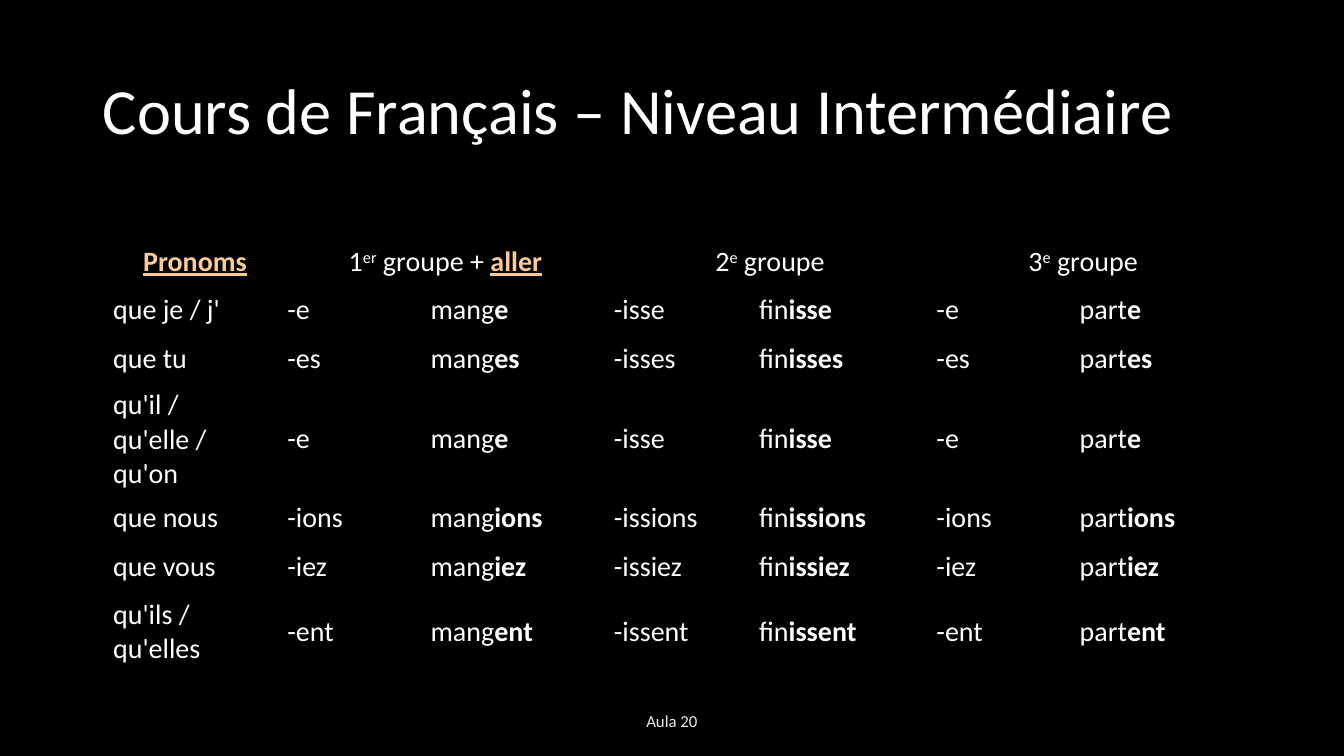
from dataclasses import dataclass

from lxml import etree
from pptx import Presentation
from pptx.dml.color import RGBColor
from pptx.enum.text import MSO_ANCHOR, MSO_AUTO_SIZE, PP_ALIGN
from pptx.oxml.ns import qn
from pptx.util import Cm, Pt

LEFT, CENTER = PP_ALIGN.LEFT, PP_ALIGN.CENTER
MIDDLE = MSO_ANCHOR.MIDDLE
NO_FIT = MSO_AUTO_SIZE.NONE


@dataclass(frozen=True)
class Theme:
    font: str = "Calibri"
    back: str = "000000"
    ink: str = "FFFFFF"
    accent: str = "FBCA98"
    fade: tuple = ((0, "9E9E9E"), (28, "EDEDED"), (100, "FFFFFF"))
    title: int = 46
    body: int = 20
    small: int = 12
    rule: float = 0.75


def add_fill(parent, color):
    fill = etree.SubElement(parent, qn("a:solidFill"))
    etree.SubElement(fill, qn("a:srgbClr"), val=color)


def add_fade(run, stops):
    """Fill the letters with a vertical gradient."""
    run.font.fill.gradient()
    grad = run.font._element.find(qn("a:gradFill"))
    for part in list(grad):
        grad.remove(part)
    group = etree.SubElement(grad, qn("a:gsLst"))
    for place, color in stops:
        stop = etree.SubElement(group, qn("a:gs"), pos=str(place * 1000))
        etree.SubElement(stop, qn("a:srgbClr"), val=color)
    etree.SubElement(grad, qn("a:lin"), ang="5400000", scaled="0")


def write(frame, runs, theme, size, align=LEFT, line=None, after=None, fade=None):
    """Write (text, style) runs; styles: bold, raised, key."""
    frame.word_wrap = True
    para = frame.paragraphs[0]
    para.alignment, para.line_spacing = align, line
    para.space_before = Pt(0)
    if after is not None:
        para.space_after = Pt(after)
    for text, style in runs:
        run = para.add_run()
        run.text = text
        font = run.font
        font.name, font.size = theme.font, Pt(size)
        font.bold = style in ("bold", "key")
        font.underline = style == "key"
        color = theme.accent if style == "key" else theme.ink
        font.color.rgb = RGBColor.from_string(color)
        if style == "raised":
            font._element.set("baseline", "30000")
        if fade:
            add_fade(run, fade)


class Deck:
    def __init__(self, theme):
        self.theme = theme
        self.show = Presentation()
        self.show.slide_width, self.show.slide_height = Cm(33.87), Cm(19.05)
        self.slide = self.show.slides.add_slide(self.show.slide_layouts[5])
        fill = self.slide.background.fill
        fill.solid()
        fill.fore_color.rgb = RGBColor.from_string(theme.back)

    def title(self, text, box):
        shape = self.slide.shapes.title
        shape.left, shape.top, shape.width, shape.height = map(Cm, box)
        frame = shape.text_frame
        frame.auto_size, frame.vertical_anchor = NO_FIT, MIDDLE
        write(frame, [(text, None)], self.theme, self.theme.title, line=0.9)

    def footer(self, text, box):
        frame = self.slide.shapes.add_textbox(*map(Cm, box)).text_frame
        frame.vertical_anchor = MIDDLE
        write(frame, [(text, None)], self.theme, self.theme.small,
              align=CENTER, after=6, fade=self.theme.fade)

    def border(self, cell):
        props = cell._tc.get_or_add_tcPr()
        for index, side in enumerate(("lnL", "lnR", "lnT", "lnB")):
            line = etree.Element(qn("a:" + side), w=str(Pt(self.theme.rule)))
            add_fill(line, self.theme.back)
            props.insert(index, line)

    def table(self, left, top, widths, heights, head, rows):
        grid = self.slide.shapes.add_table(
            len(heights), len(widths), Cm(left), Cm(top),
            Cm(sum(widths)), Cm(sum(heights))).table
        grid.first_row = grid.horz_banding = False
        for column, width in zip(grid.columns, widths):
            column.width = Cm(width)
        for row, height in zip(grid.rows, heights):
            row.height = Cm(height)
        for cell in grid.iter_cells():
            cell.fill.background()
            cell.vertical_anchor = MIDDLE
            cell.margin_left = cell.margin_right = Cm(0.13)
            cell.margin_top = cell.margin_bottom = Cm(0.13)
            self.border(cell)

        # The first heading has one column, each group has two
        for index, runs in enumerate(head):
            col = max(0, 2 * index - 1)
            cell = grid.cell(0, col)
            if index:
                cell.merge(grid.cell(0, col + 1))
            write(cell.text_frame, runs, self.theme, self.theme.body, align=CENTER)
        for r, row in enumerate(rows, 1):
            for c, runs in enumerate(row):
                write(grid.cell(r, c).text_frame, runs, self.theme, self.theme.body)

    def save(self):
        self.show.save("out.pptx")


def main():
    deck = Deck(Theme())
    deck.title("Cours de Français – Niveau Intermédiaire", (2.34, 1.02, 29.21, 3.68))
    deck.footer("Aula 20", (11.22, 17.65, 11.43, 1.02))

    # Headings
    head = [
        [("Pronoms", "key")],
        [("1", None), ("er", "raised"), (" groupe + ", None), ("aller", "key")],
    ]
    head += [[(num, None), ("e", "raised"), (" groupe", None)] for num in "23"]

    # Endings: the second group puts "iss" before the shared ending
    nouns = ["que je / j'", "que tu", "qu'il / qu'elle / qu'on",
             "que nous", "que vous", "qu'ils / qu'elles"]
    ends = ["e", "es", "e", "ions", "iez", "ent"]
    stems = [("mang", ""), ("fin", "iss"), ("part", "")]
    rows = []
    for noun, end in zip(nouns, ends):
        row = [[(noun, None)]]
        for stem, infix in stems:
            tail = infix + end
            row += [[("-" + tail, None)], [(stem, None), (tail, "bold")]]
        rows.append(row)

    widths = [4.39, 3.61, 4.62, 3.66, 4.47, 3.61, 4.04]
    heights = [2.08 if i in (3, 6) else 1.22 for i in range(7)]
    deck.table(2.72, 5.99, widths, heights, head, rows)
    deck.save()


if __name__ == "__main__":
    main()
